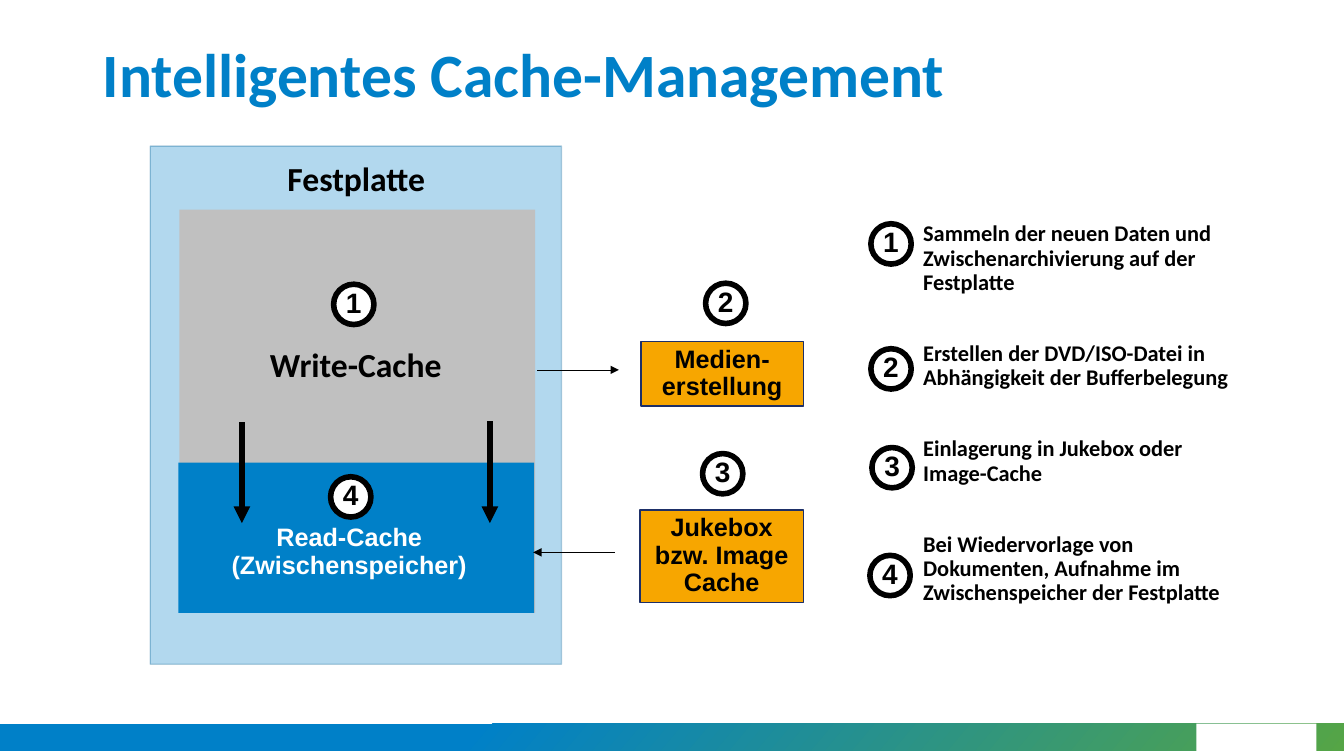
from lxml import etree
from pptx import Presentation
from pptx import util as u
from pptx.dml.color import RGBColor
from pptx.enum import shapes, text
from pptx.oxml import ns

COLORS = {
    "blue": "0080C8", "edge": "005F94", "green": "55A546", "grey": "C0C0C0",
    "orange": "F7A600", "navy": "1D2F68", "black": "000000", "white": "FFFFFF",
}
WIDTH, HEIGHT = u.Inches(13.33), u.Inches(7.5)
COLUMNS, ROWS = 160, 90
BADGE = 4.8
LEFT, CENTER = text.PP_ALIGN.LEFT, text.PP_ALIGN.CENTER


def color(name):
    return RGBColor.from_string(COLORS[name])


def point(column, row):
    return int(WIDTH * column / COLUMNS), int(HEIGHT * row / ROWS)


def place(column, row, columns, rows):
    return *point(column, row), *point(columns, rows)


def set_alpha(fill_parent, percent):
    for tint in fill_parent.iterfind(ns.qn("a:solidFill") + "/" + ns.qn("a:srgbClr")):
        etree.SubElement(tint, ns.qn("a:alpha"), val=str(percent * 1000))


def write(shape, paragraphs, size, font="Calibri", ink="black", align=CENTER,
          spacing=0.9, gap=0, anchor=text.MSO_ANCHOR.TOP):
    frame = shape.text_frame
    frame.word_wrap = True
    frame.vertical_anchor = anchor
    frame.text = "\n".join(paragraphs)
    for index, paragraph in enumerate(frame.paragraphs):
        paragraph.alignment = align
        paragraph.line_spacing = spacing
        paragraph.space_before = u.Pt(gap if index else 0)
        paragraph.font.size = u.Pt(size)
        paragraph.font.name = font
        paragraph.font.bold = True
        paragraph.font.color.rgb = color(ink)


def block(slide, area, fill, outline=None, weight=1, kind=shapes.MSO_SHAPE.RECTANGLE):
    shape = slide.shapes.add_shape(kind, *place(*area))
    shape.shadow.inherit = False
    shape.fill.solid()
    shape.fill.fore_color.rgb = color(fill)
    if outline:
        shape.line.color.rgb = color(outline)
        shape.line.width = u.Pt(weight)
    else:
        shape.line.fill.background()
    return shape


def label(slide, area, paragraphs, size, **style):
    write(slide.shapes.add_textbox(*place(*area)), paragraphs, size, **style)


def badge(slide, column, row, number):
    circle = block(slide, (column, row, BADGE, BADGE), "white", "black", 4,
                   shapes.MSO_SHAPE.OVAL)
    frame = circle.text_frame
    frame.margin_left = frame.margin_right = frame.margin_top = frame.margin_bottom = 0
    write(circle, [str(number)], 20, font="Arial", anchor=text.MSO_ANCHOR.MIDDLE)


def arrow(slide, start, end, weight):
    line = slide.shapes.add_connector(shapes.MSO_CONNECTOR.STRAIGHT,
                                      *point(*start), *point(*end))
    line.line.color.rgb = color("black")
    line.line.width = u.Pt(weight)
    etree.SubElement(line.line._get_or_add_ln(), ns.qn("a:tailEnd"), type="triangle")
    etree.SubElement(line._element.spPr, ns.qn("a:effectLst"))


def footer(slide):
    band = block(slide, (0, 86.16, COLUMNS, 3.24), "blue")
    band.fill.gradient()
    band.fill.gradient_angle = 320
    for stop, (name, position) in zip(band.fill.gradient_stops,
                                      [("blue", 0.35), ("green", 1)]):
        stop.color.rgb = color(name)
        stop.position = position
    block(slide, (142.44, 86.16, 14.28, 3.24), "white")


def disk(slide):
    casing = block(slide, (17.88, 17.4, 48.96, 61.68), "blue", "edge")
    set_alpha(casing._element.spPr, 30)
    set_alpha(casing.line._get_or_add_ln(), 30)
    block(slide, (21.36, 24.96, 42.36, 48), "grey")
    block(slide, (21.24, 55.08, 42.36, 17.88), "blue")
    label(slide, (21.24, 18.72, 42.36, 5.52), ["Festplatte"], 24)
    label(slide, (30.96, 40.92, 24.24, 5.52), ["Write-Cache"], 24, align=LEFT)
    label(slide, (26.16, 61.92, 30.84, 7.68), ["Read-Cache", "(Zwischenspeicher)"],
          18, font="Arial", ink="white")


def main():
    deck = Presentation()
    deck.slide_width, deck.slide_height = WIDTH, HEIGHT
    slide = deck.slides.add_slide(deck.slide_layouts[6])

    footer(slide)
    label(slide, (11.04, 0, 138, 17.4), ["Intelligentes Cache-Management"], 44,
          ink="blue", align=LEFT, spacing=1, anchor=text.MSO_ANCHOR.MIDDLE)
    disk(slide)

    for area, step in [
        ((76.32, 40.68, 19.32, 7.68), "Medien-erstellung"),
        ((76.2, 60.72, 19.44, 11.04), "Jukebox bzw. Image Cache"),
    ]:
        write(block(slide, area, "orange", "navy"), [step], 18, font="Arial")

    label(slide, (108.72, 25.92, 39, 51.6), [
        "Sammeln der neuen Daten und Zwischenarchivierung auf der Festplatte",
        "Erstellen der DVD/ISO-Datei in Abhängigkeit der Bufferbelegung",
        "Einlagerung in Jukebox oder Image-Cache",
        "Bei Wiedervorlage von Dokumenten, Aufnahme im Zwischenspeicher der Festplatte",
    ], 16, align=LEFT, gap=33.6)

    for column, row, number in [
        (39.72, 33.84, 1), (84, 33.72, 2), (83.64, 54, 3), (39.36, 56.76, 4),
        (103.68, 26.64, 1), (103.68, 41.52, 2), (103.8, 53.28, 3), (103.56, 66.12, 4),
    ]:
        badge(slide, column, row, number)

    for start, end, weight in [
        ((28.8, 50.28), (28.8, 62.28), 4),
        ((58.32, 50.16), (58.32, 62.28), 4),
        ((63.96, 44.04), (73.68, 44.04), 0.5),
        ((73.2, 65.76), (63.48, 65.76), 0.5),
    ]:
        arrow(slide, start, end, weight)

    deck.save("out.pptx")


if __name__ == "__main__":
    main()
